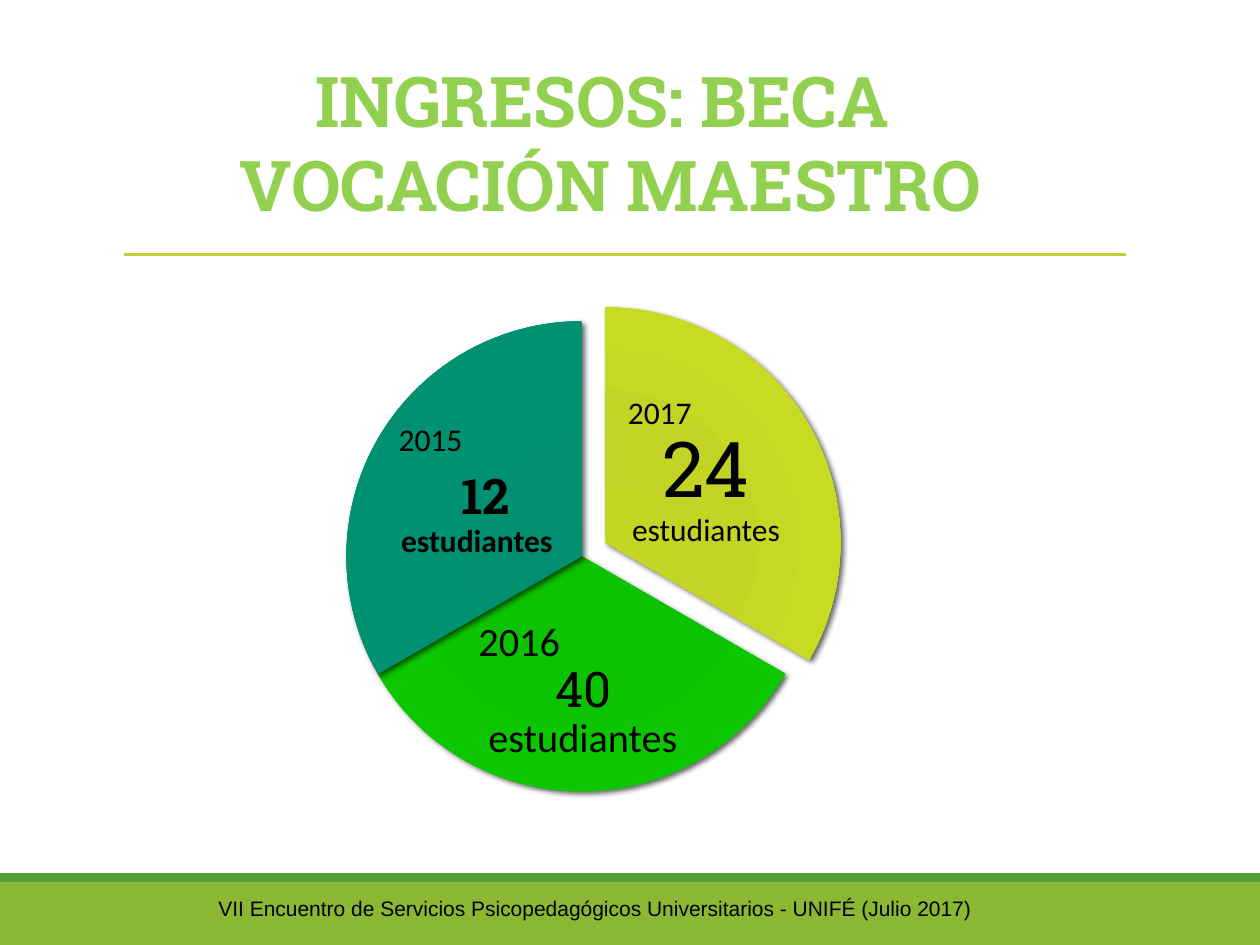
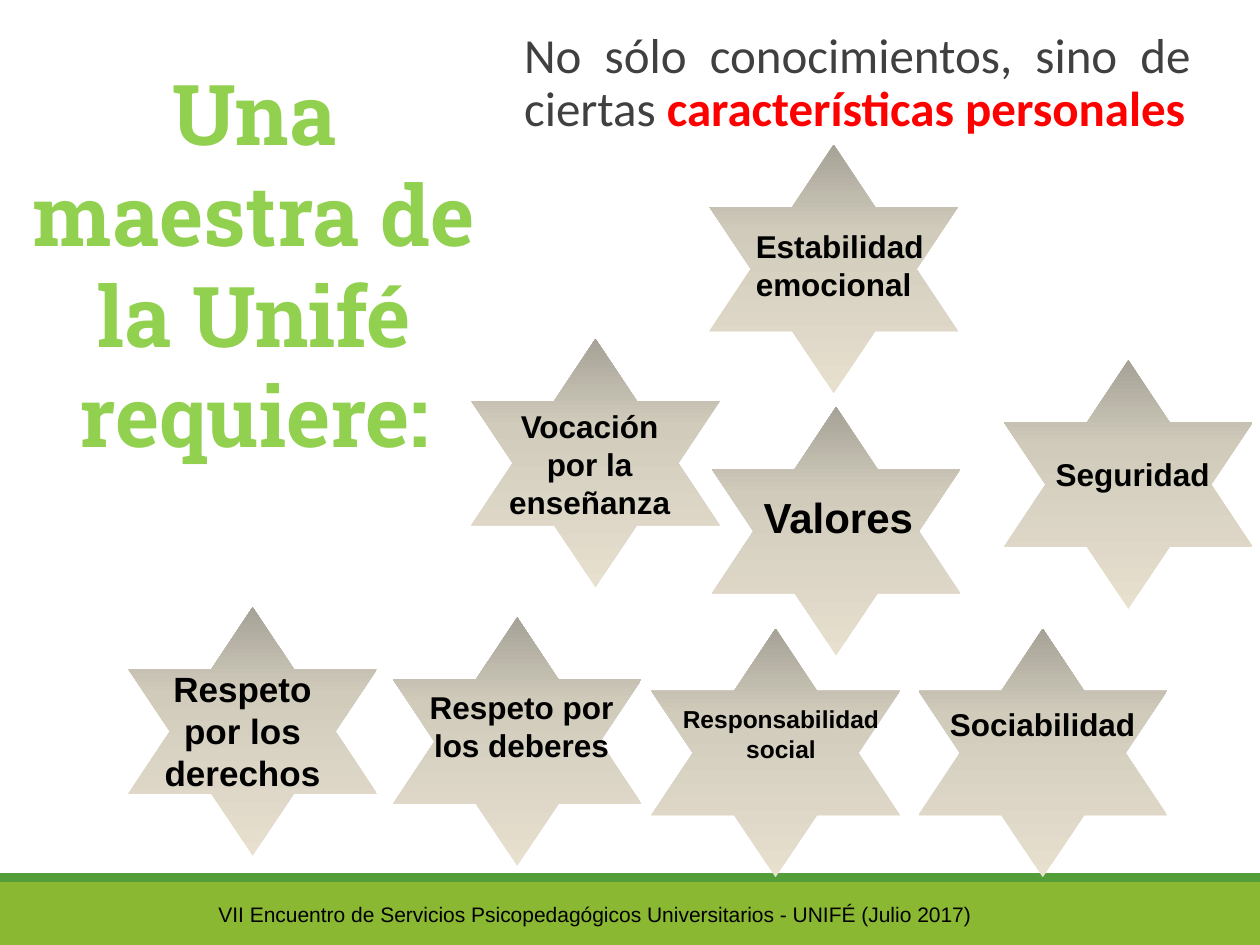
from dataclasses import dataclass

import pptx
import pptx.dml.color
import pptx.enum.shapes
import pptx.enum.text
import pptx.oxml
import pptx.oxml.ns
import pptx.util

Pt = pptx.util.Pt
Shapes = pptx.enum.shapes.MSO_SHAPE
Align = pptx.enum.text.PP_ALIGN
Anchor = pptx.enum.text.MSO_ANCHOR
NAMESPACE = pptx.oxml.ns.nsdecls("a")


@dataclass(frozen=True)
class Theme:
    width: float = 720
    height: float = 540
    # Colours
    band: str = "8AB833"
    strip: str = "549E39"
    rule: str = "C0CF3A"
    title: str = "92D050"
    body: str = "404040"
    accent: str = "FF0000"
    ink: str = "000000"
    star: tuple = ((0, "E7E0CF"), (65, "D0CBBB"), (100, "A6A297"))
    # Fonts
    slab: str = "Roboto Slab"
    sans: str = "Calibri"
    plain: str = "Arial"
    # Type sizes
    title_size: float = 40
    side_title_size: float = 48
    body_size: float = 28
    label_size: float = 18
    footer_size: float = 12


FOOTER = "VII Encuentro de Servicios Psicopedagógicos Universitarios - UNIFÉ (Julio 2017)"
SLICE_ANGLES = {"2017": (270, 30), "2016": (30, 150), "2015": (150, 270)}


class Builder:
    """Holds the theme, the deck and the slide being drawn."""

    def __init__(self, theme):
        self.theme = theme
        self.deck = pptx.Presentation()
        self.deck.slide_width = Pt(theme.width)
        self.deck.slide_height = Pt(theme.height)
        self.slide = None

    def new_slide(self):
        self.slide = self.deck.slides.add_slide(self.deck.slide_layouts[6])
        self.shape(Shapes.RECTANGLE, 0, 504, self.theme.width, 36, self.theme.band)
        self.shape(Shapes.RECTANGLE, 0, 499, self.theme.width, 5, self.theme.strip)

    def color(self, value):
        return pptx.dml.color.RGBColor.from_string(value)

    def shape(self, kind, left, top, width, height, fill=None):
        shape = self.slide.shapes.add_shape(kind, Pt(left), Pt(top), Pt(width), Pt(height))
        shape.shadow.inherit = False
        shape.line.fill.background()
        if fill:
            shape.fill.solid()
            shape.fill.fore_color.rgb = self.color(fill)
        else:
            shape.fill.background()
        return shape

    def gradient(self, shape, stops, direction):
        """Replace the empty fill of a shape by a gradient of several stops."""
        marks = "".join(
            f'<a:gs pos="{place * 1000}"><a:srgbClr val="{color}"/></a:gs>'
            for place, color in stops
        )
        fill = pptx.oxml.parse_xml(
            f"<a:gradFill {NAMESPACE}><a:gsLst>{marks}</a:gsLst>{direction}</a:gradFill>"
        )
        properties = shape.element.spPr
        properties.replace(properties.find(pptx.oxml.ns.qn("a:noFill")), fill)

    def star(self, left, top):
        star = self.shape(Shapes.STAR_6_POINT, left, top, 142, 142)
        self.gradient(star, self.theme.star, '<a:lin ang="16200000" scaled="0"/>')

    def slice(self, left, top, angles, colors):
        pie = self.shape(Shapes.PIE, left, top, 268.6, 268.6)
        for index, angle in enumerate(angles):
            pie.adjustments[index] = angle * 0.6
        center = '<a:fillToRect l="100000" t="100000" r="100000" b="100000"/>'
        stops = zip((0, 34, 70, 100), colors)
        self.gradient(pie, stops, f'<a:path path="circle">{center}</a:path>')
        effects = pptx.oxml.parse_xml(
            f'<a:effectLst {NAMESPACE}><a:outerShdw blurRad="{Pt(3)}" dist="{Pt(2)}" '
            f'dir="2700000" rotWithShape="0"><a:srgbClr val="{self.theme.ink}">'
            '<a:alpha val="60000"/></a:srgbClr></a:outerShdw></a:effectLst>'
        )
        properties = pie.element.spPr
        properties.replace(properties.find(pptx.oxml.ns.qn("a:effectLst")), effects)

    def rule(self, left, right, top):
        line = self.slide.shapes.add_connector(
            pptx.enum.shapes.MSO_CONNECTOR.STRAIGHT, Pt(left), Pt(top), Pt(right), Pt(top)
        )
        line.line.color.rgb = self.color(self.theme.rule)
        line.line.width = Pt(1.25)
        line.element.spPr.append(pptx.oxml.parse_xml(f"<a:effectLst {NAMESPACE}/>"))

    def box(self, left, top, width, height, insets=(7.2, 3.6), anchor=Anchor.TOP, wrap=True):
        box = self.slide.shapes.add_textbox(Pt(left), Pt(top), Pt(width), Pt(height))
        frame = box.text_frame
        frame.word_wrap = wrap
        frame.vertical_anchor = anchor
        frame.margin_left = frame.margin_right = Pt(insets[0])
        frame.margin_top = frame.margin_bottom = Pt(insets[1])
        return frame

    def para(self, frame, align=Align.CENTER, spacing=None):
        first = frame.paragraphs[0]
        para = frame.add_paragraph() if first.runs else first
        para.alignment = align
        if spacing:
            para.line_spacing = spacing
        return para

    def span(self, para, text, size, font, color, bold=False):
        span = para.add_run()
        span.text = text
        span.font.size = Pt(size)
        span.font.name = font
        span.font.bold = bold
        span.font.color.rgb = self.color(color)

    def title(self, lines, size, *place):
        frame = self.box(*place)
        for line in lines:
            self.span(self.para(frame), line, size, self.theme.slab, self.theme.title, True)

    def label(self, text, left, top, width, height, size, align, wrap):
        para = self.para(self.box(left, top, width, height, wrap=wrap), align)
        self.span(para, text, size, self.theme.plain, self.theme.ink, True)

    def slice_label(self, place, year, count, size, count_size, bold=False, indent=0, gap=0):
        """Year at the left, then the count and its unit in the middle."""
        theme = self.theme
        frame = self.box(*place, insets=(1, 2), anchor=Anchor.MIDDLE)
        self.span(self.para(frame, Align.LEFT, 0.9), year, size, theme.sans, theme.ink)
        para = self.para(frame, spacing=0.9)
        para.space_before = Pt(gap)
        para._p.get_or_add_pPr().set("marL", str(Pt(indent)))
        self.span(para, count, count_size, theme.slab, theme.ink, bold)
        para = self.para(frame, spacing=0.9)
        self.span(para, "estudiantes", size, theme.sans, theme.ink, bold)

    def footer(self, top):
        para = self.para(self.box(0, top, 680.4, 36))
        self.span(para, FOOTER, self.theme.footer_size, self.theme.plain, self.theme.ink)


def scholarship_slide(builder):
    builder.new_slide()
    builder.rule(70.6, 643.7, 145.4)

    # Pie slices, the latest year pulled out
    builder.slice(211.7, 175.7, SLICE_ANGLES["2017"], ("C4D621", "C3D425", "C8DB22", "C6D633"))
    builder.slice_label((357.8, 225.4, 91.4, 89.3), "2017", "24", 18, 44)
    builder.slice(198, 183.6, SLICE_ANGLES["2016"], ("0BC200", "0CC301", "0CC700", "18C30E"))
    builder.slice_label((272.4, 353.5, 121.7, 83.5), "2016", "40", 23, 28)
    builder.slice(198, 183.6, SLICE_ANGLES["2015"], ("008E6F", "008F70", "009172", "009877"))
    builder.slice_label((226.8, 236.2, 91.4, 89.3), "2015", "12", 18, 28, True, 10, 8)

    builder.footer(508.3)
    builder.title(
        ("INGRESOS: BECA ", "VOCACIÓN MAESTRO"), builder.theme.title_size, 14.4, 29.5, 668.9, 104.4
    )


def qualities_slide(builder):
    theme = builder.theme
    builder.new_slide()

    # Opening statement
    frame = builder.box(299.5, 14.4, 380.9, 85.7, insets=(0, 3.6))
    para = builder.para(frame, Align.JUSTIFY, 0.9)
    opening = "No sólo conocimientos, sino de ciertas "
    builder.span(para, opening, theme.body_size, theme.sans, theme.body)
    emphasis = "características personales"
    builder.span(para, emphasis, theme.body_size, theme.sans, theme.accent, True)

    builder.footer(511.9)
    side_title = ("Una maestra de la Unifé requiere:",)
    builder.title(side_title, theme.side_title_size, 0.7, 31.7, 289.4, 239.8)

    # Stars
    for left, top in (
        (405.4, 82.8), (73.4, 347), (372.2, 359.3), (269.3, 193.7),
        (224.6, 352.8), (524.9, 359.3), (406.8, 232.6), (573.8, 205.9),
    ):
        builder.star(left, top)

    # Qualities: text, left, top, width, height, size, alignment, wrap
    size = theme.label_size
    for quality in (
        ("Seguridad", 596.2, 256.3, 105.1, 28.8, size, Align.LEFT, True),
        ("Respeto por los derechos", 74.9, 378, 127.4, 79.9, 20, Align.CENTER, True),
        ("Estabilidad emocional", 424.8, 126, 120.2, 51.1, size, Align.LEFT, True),
        ("Responsabilidad social", 379.4, 398.9, 133.9, 41, 14, Align.CENTER, True),
        ("Vocación por la enseñanza", 280.8, 229, 112.3, 72.7, size, Align.CENTER, True),
        ("Sociabilidad", 535.7, 399.6, 121.7, 28.8, size, Align.LEFT, False),
        ("Respeto por los deberes", 234.7, 389.5, 126.7, 51.1, size, Align.CENTER, True),
        ("Valores", 422.6, 277.2, 113, 36, 24, Align.CENTER, True),
    ):
        builder.label(*quality)


def main():
    builder = Builder(Theme())
    scholarship_slide(builder)
    qualities_slide(builder)
    builder.deck.save("out.pptx")


if __name__ == "__main__":
    main()
